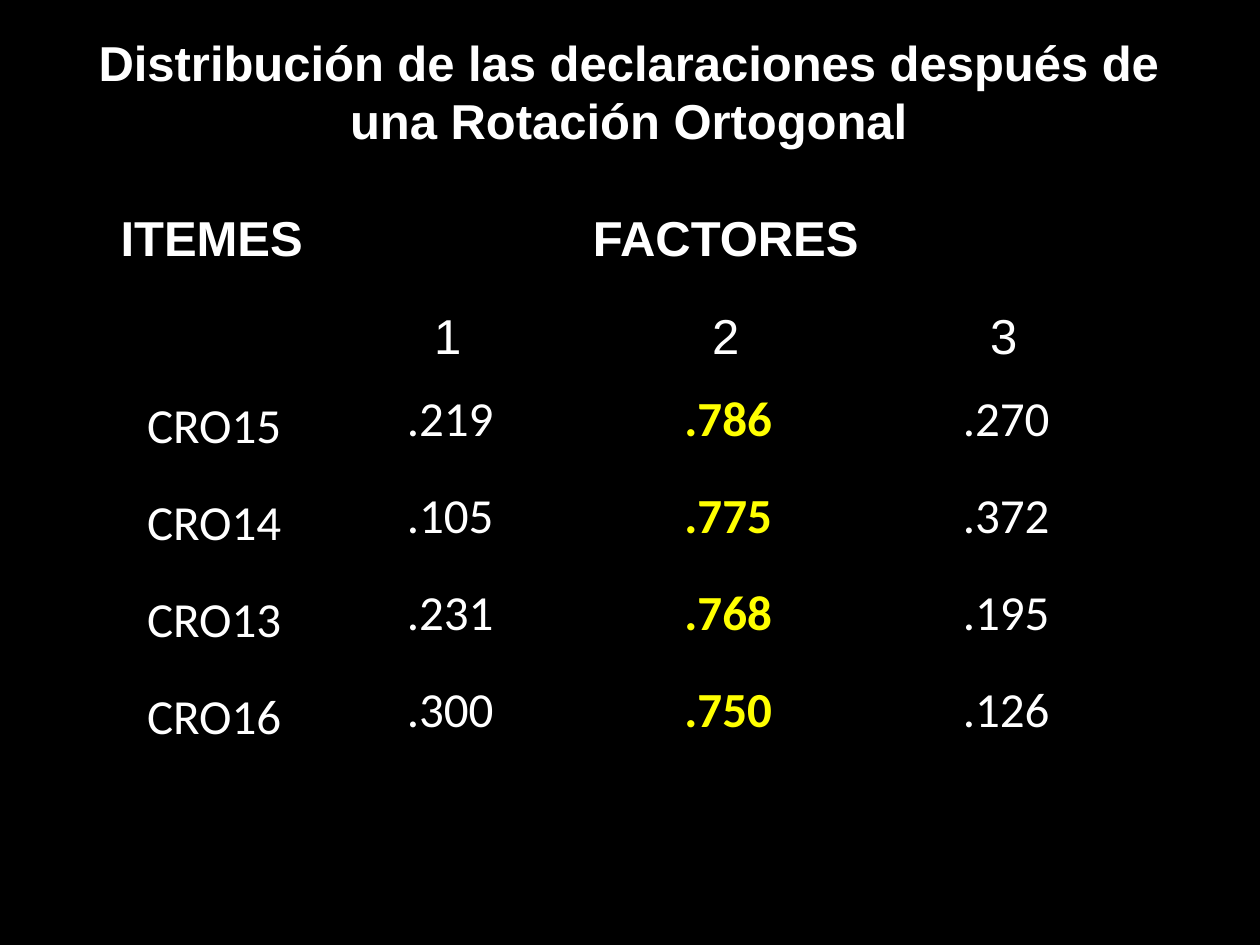
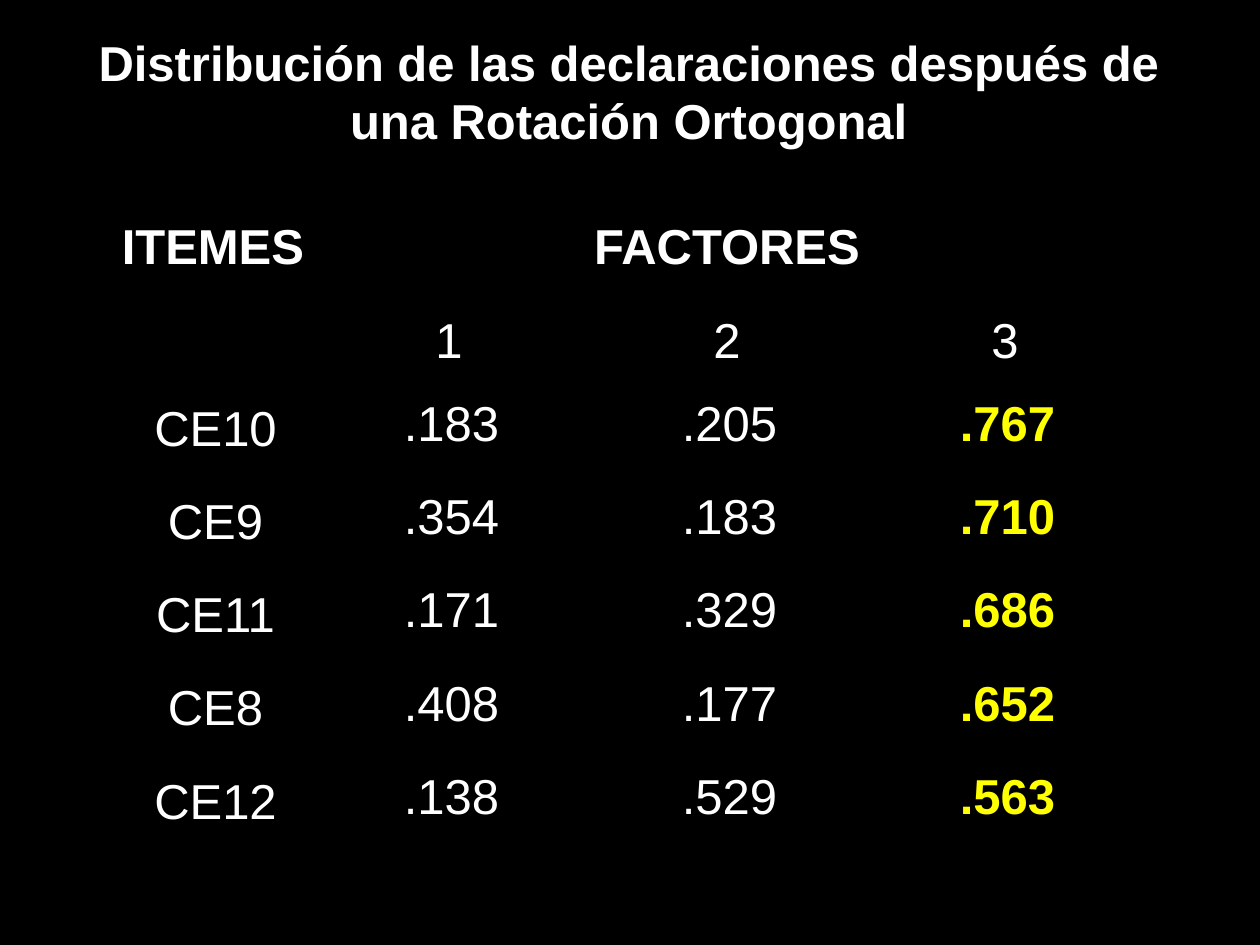
"""Build two slides of factor loadings after an orthogonal rotation."""
import dataclasses

import lxml.etree
import pptx
import pptx.dml.color
import pptx.enum.text
import pptx.oxml
import pptx.oxml.ns
import pptx.util


@dataclasses.dataclass(frozen=True)
class Theme:
    background: str = "000000"
    text: str = "FFFFFF"
    highlight: str = "FFFF00"
    font: str = "Arial"
    size: int = 28
    line_spacing: int = 16
    border: float = 1


theme = Theme()
ALIGN = pptx.enum.text.PP_ALIGN
ANCHOR = pptx.enum.text.MSO_ANCHOR
TITLE = "Distribución de las declaraciones después de una Rotación Ortogonal"
HEADINGS = [["ITEMES", "FACTORES", "", ""], ["", "1", "2", "3"]]
SLIDES = [
    {
        "left": 0.091, "top": 0.209, "row": 0.77, "font": "Calibri", "factor": 2,
        "items": [
            ["CRO15", ".219", ".786", ".270"],
            ["CRO14", ".105", ".775", ".372"],
            ["CRO13", ".231", ".768", ".195"],
            ["CRO16", ".300", ".750", ".126"],
        ],
    },
    {
        "left": 0.092, "top": 0.219, "row": 0.74, "font": "Arial", "factor": 3,
        "items": [
            ["CE10", ".183", ".205", ".767"],
            ["CE9", ".354", ".183", ".710"],
            ["CE11", ".171", ".329", ".686"],
            ["CE8", ".408", ".177", ".652"],
            ["CE12", ".138", ".529", ".563"],
        ],
    },
]


def write(frame, text, font, color, bold):
    para = frame.paragraphs[0]
    para.alignment = ALIGN.CENTER
    span = para.add_run()
    span.text = text
    span.font.name = font
    span.font.size = pptx.util.Pt(theme.size)
    span.font.bold = bold
    span.font.color.rgb = pptx.dml.color.RGBColor.from_string(color)
    return para


def draw_borders(cell):
    properties = cell._tc.get_or_add_tcPr()
    for side in ("a:lnL", "a:lnR", "a:lnT", "a:lnB"):
        line = lxml.etree.SubElement(properties, pptx.oxml.ns.qn(side))
        line.set("w", str(int(pptx.util.Pt(theme.border))))
        fill = lxml.etree.SubElement(line, pptx.oxml.ns.qn("a:solidFill"))
        color = lxml.etree.SubElement(fill, pptx.oxml.ns.qn("a:srgbClr"))
        color.set("val", theme.background)


deck = pptx.Presentation()
deck.slide_width = pptx.util.Inches(10)
deck.slide_height = pptx.util.Inches(7.5)
width, height = deck.slide_width, deck.slide_height
table_width = int(0.816 * width)
item_width = int(0.154 * width)
factor_width = (table_width - item_width) // 3

for content in SLIDES:
    page = deck.slides.add_slide(deck.slide_layouts[6])
    page.background.fill.solid()
    page.background.fill.fore_color.rgb = pptx.dml.color.RGBColor.from_string(theme.background)

    rows = HEADINGS + content["items"]
    row_heights = [content["row"] - 0.1, content["row"] + 0.12]
    row_heights += [content["row"]] * len(content["items"])
    table = page.shapes.add_table(
        len(rows), 4, int(content["left"] * width), int(content["top"] * height),
        table_width, pptx.util.Inches(sum(row_heights)),
    ).table
    table.first_row = False
    table.horz_banding = False
    for number, column in enumerate(table.columns):
        column.width = factor_width if number else item_width
    for row, row_height in zip(table.rows, row_heights):
        row.height = pptx.util.Inches(row_height)
    table.cell(0, 1).merge(table.cell(0, 3))

    for row_number, texts in enumerate(rows):
        for column_number, text in enumerate(texts):
            cell = table.cell(row_number, column_number)
            cell.margin_left = cell.margin_right = cell.margin_top = cell.margin_bottom = 0
            cell.vertical_anchor = ANCHOR.MIDDLE
            draw_borders(cell)
            cell.fill.background()
            if not text:
                continue
            is_item = row_number >= len(HEADINGS)
            is_highlight = is_item and column_number == content["factor"]
            para = write(
                cell.text_frame, text,
                content["font"] if is_item else theme.font,
                theme.highlight if is_highlight else theme.text,
                is_highlight or row_number == 0,
            )
            if is_item:
                para.line_spacing = pptx.util.Pt(theme.line_spacing)
                cell.margin_left = pptx.util.Inches(0.04)
            if is_item and column_number:
                cell.vertical_anchor = ANCHOR.TOP
                cell.margin_top = pptx.util.Pt(theme.line_spacing)

    box = page.shapes.add_textbox(
        int(0.043 * width), int(0.025 * height), int(0.912 * width), int(0.193 * height)
    )
    box.text_frame.word_wrap = True
    box.text_frame.vertical_anchor = ANCHOR.MIDDLE
    box.text_frame.margin_bottom = pptx.util.Inches(0.43)
    write(box.text_frame, TITLE, theme.font, theme.text, True)

deck.save("out.pptx")
